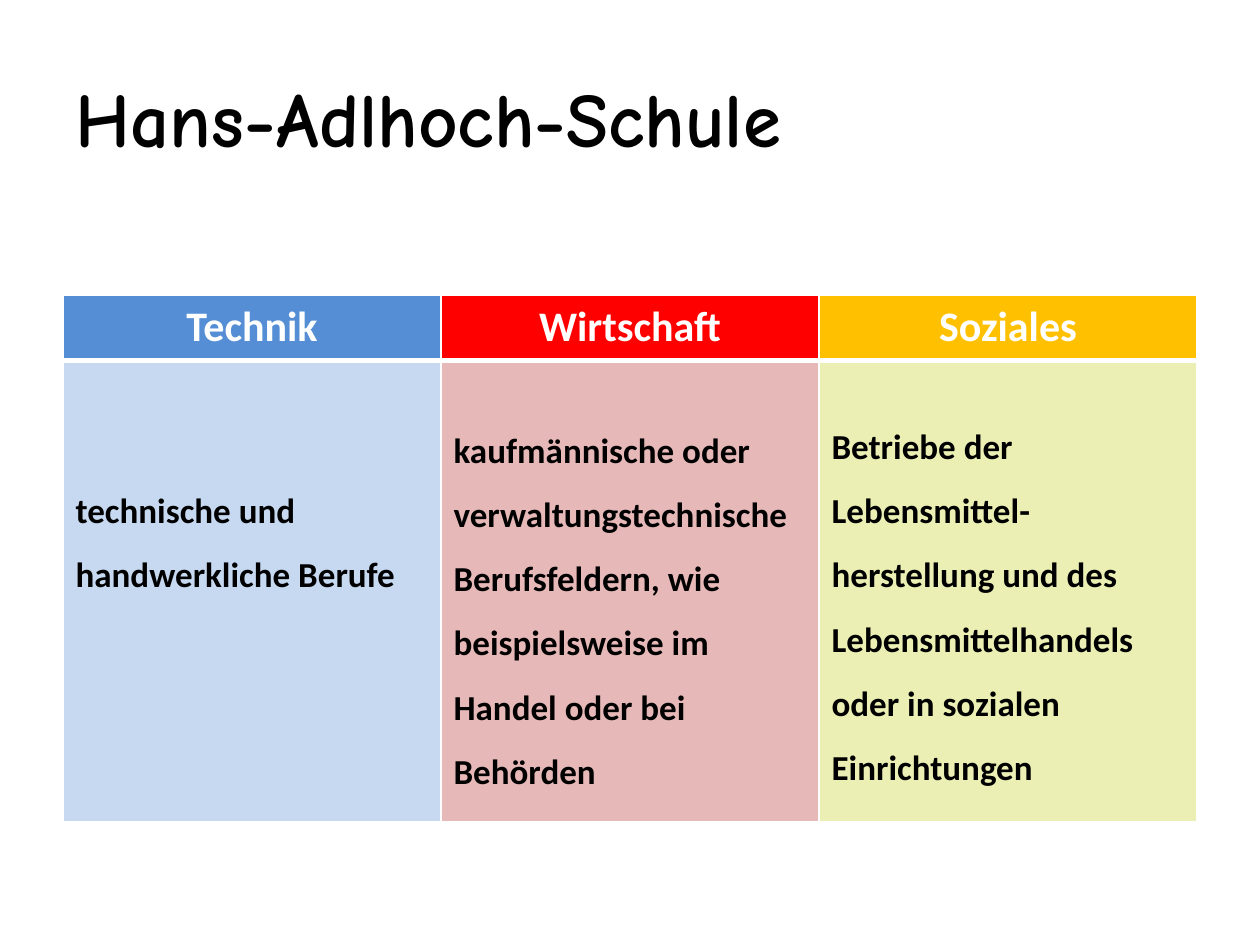
from dataclasses import dataclass

from lxml.etree import SubElement
from pptx import Presentation
from pptx.dml.color import RGBColor
from pptx.enum.text import MSO_ANCHOR, PP_ALIGN
from pptx.oxml.ns import qn
from pptx.util import Inches, Pt

# Content: heading, heading fill, body, body fill, space above the body (inches)
TITLE = "Hans-Adlhoch-Schule"
FIELDS = [
    ("Technik", "558ED5", "technische und handwerkliche Berufe", "C6D9F1", 0.86),
    ("Wirtschaft", "FF0000",
     "kaufmännische oder verwaltungstechnische Berufsfeldern, "
     "wie beispielsweise im Handel oder bei Behörden", "E6B9B8", 0.38),
    ("Soziales", "FFC000",
     "Betriebe der Lebensmittel-herstellung und des Lebensmittelhandels "
     "oder in sozialen Einrichtungen", "EBEFB3", 0.35),
]


@dataclass(frozen=True)
class Theme:
    title_font: str = "Comic Neue"
    body_font: str = "Calibri"
    dark: str = "000000"
    light: str = "FFFFFF"
    title_size: int = 44
    head_size: int = 24
    body_size: int = 20
    thin: int = 1
    thick: int = 3


T = Theme()
W, H = 10, 7.5
MARGIN = W * 0.05
TABLE_TOP = 2.34
ROWS = (0.52, 3.66)


def write(tf, text, size, color, font=T.body_font, align=PP_ALIGN.LEFT, spacing=None):
    p = tf.paragraphs[0]
    p.alignment, p.line_spacing = align, spacing
    r = p.add_run()
    r.text = text
    r.font.name, r.font.size, r.font.bold = font, Pt(size), True
    r.font.color.rgb = RGBColor.from_string(color)


def style_cell(cell, fill, top, bottom):
    """Draw the light cell borders, then the fill."""
    tc_pr = cell._tc.get_or_add_tcPr()
    for side, width in zip("LRTB", (T.thin, T.thin, top, bottom)):
        ln = SubElement(tc_pr, qn(f"a:ln{side}"), w=str(Pt(width)))
        SubElement(SubElement(ln, qn("a:solidFill")), qn("a:srgbClr"), val=T.light)
    cell.fill.solid()
    cell.fill.fore_color.rgb = RGBColor.from_string(fill)


prs = Presentation()
prs.slide_width, prs.slide_height = Inches(W), Inches(H)
s = prs.slides.add_slide(prs.slide_layouts[5])

# Title
title = s.shapes.title
title.left, title.top = Inches(MARGIN), Inches(H * 0.04)
title.width, title.height = Inches(W - 2 * MARGIN), Inches(1.25)
title.text_frame.vertical_anchor = MSO_ANCHOR.MIDDLE
write(title.text_frame, TITLE, T.title_size, T.dark, font=T.title_font)

# Table of fields
table = s.shapes.add_table(len(ROWS), len(FIELDS), Inches(MARGIN), Inches(TABLE_TOP),
                           Inches(W - 2 * MARGIN), Inches(sum(ROWS))).table
table.horz_banding = False
for row, height in zip(table.rows, ROWS):
    row.height = Inches(height)

for col, (name, head_fill, text, body_fill, space) in enumerate(FIELDS):
    head, body = table.cell(0, col), table.cell(1, col)
    style_cell(head, head_fill, T.thin, T.thick)
    write(head.text_frame, name, T.head_size, T.light, align=PP_ALIGN.CENTER)
    style_cell(body, body_fill, T.thick, T.thin)
    body.margin_top = Inches(space)
    write(body.text_frame, text, T.body_size, T.dark, spacing=1.5)

prs.save("out.pptx")
